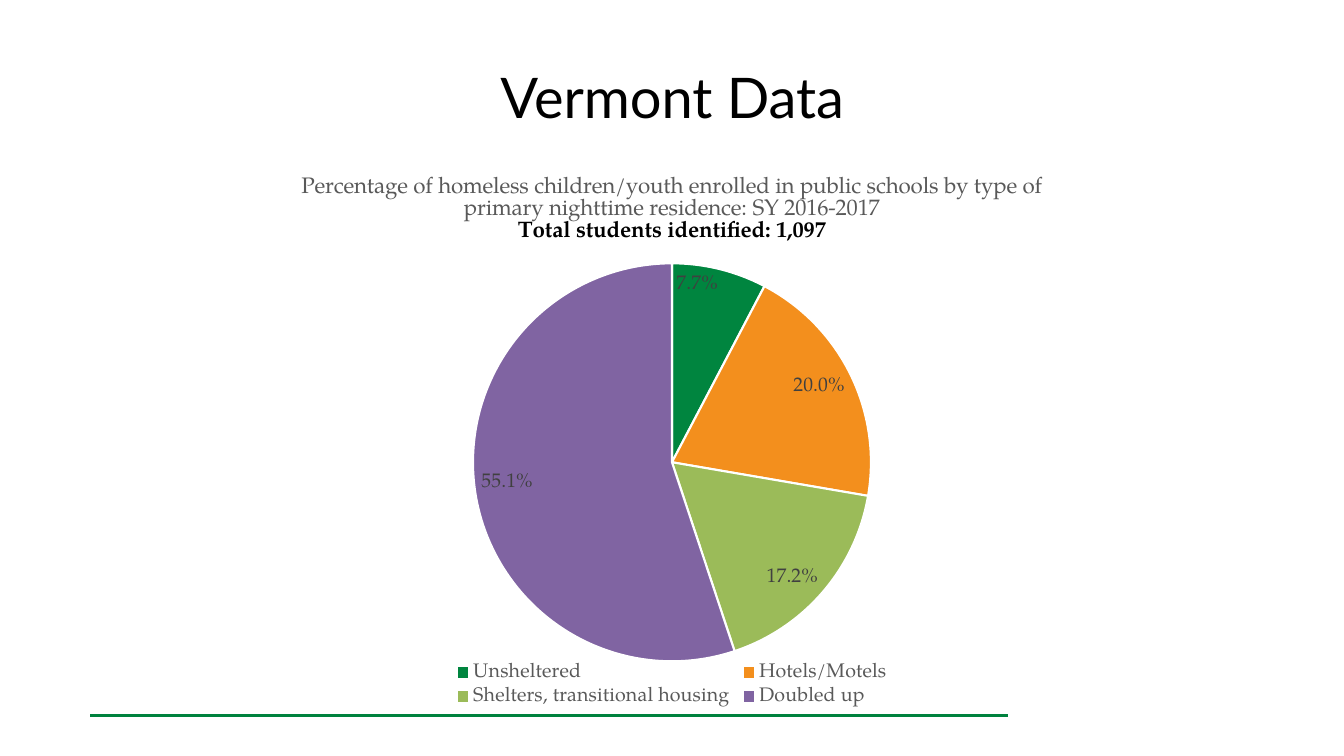
from lxml import etree
from pptx import Presentation
from pptx.chart.data import CategoryChartData
from pptx.dml.color import RGBColor
from pptx.enum.chart import XL_CHART_TYPE, XL_LABEL_POSITION, XL_LEGEND_POSITION
from pptx.enum.shapes import MSO_CONNECTOR
from pptx.enum.text import MSO_ANCHOR, PP_ALIGN
from pptx.oxml import parse_xml
from pptx.oxml.ns import nsdecls, qn
from pptx.util import Cm, Pt

PIE = XL_CHART_TYPE.PIE
INSIDE_END = XL_LABEL_POSITION.INSIDE_END
BOTTOM = XL_LEGEND_POSITION.BOTTOM
STRAIGHT = MSO_CONNECTOR.STRAIGHT
MIDDLE = MSO_ANCHOR.MIDDLE
CENTER = PP_ALIGN.CENTER

HEADING_FONT = "Lato"
CHART_FONT = "TeX Gyre Pagella"
RESIDENCES = [
    ("Unsheltered", 0.077, "00853F"),
    ("Hotels/Motels", 0.2, "F38F1D"),
    ("Shelters, transitional housing", 0.172, "9BBB59"),
    ("Doubled up", 0.551, "8064A2"),
]
CHART_TITLE = [
    ("Percentage of homeless children/youth enrolled in public schools by type of "
     "primary nighttime residence: SY 2016-2017", "595959", False),
    ("Total students identified: 1,097", "000000", True),
]


def color(hex_string):
    return RGBColor.from_string(hex_string)


def format_font(font, name, size, hex_string, bold=False):
    font.name = name
    font.size = Pt(size)
    font.bold = bold
    font.color.rgb = color(hex_string)


def write(para, text, name=CHART_FONT, size=16, hex_string="000000", bold=False):
    para.alignment = CENTER
    span = para.add_run()
    span.text = text
    format_font(span.font, name, size, hex_string, bold)


def add_heading(page, left, top, width, height):
    frame = page.shapes.add_textbox(left, top, width, height).text_frame
    frame.word_wrap = True
    frame.vertical_anchor = MIDDLE
    write(frame.paragraphs[0], "Vermont Data", name=HEADING_FONT, size=40)


def add_footer_rule(page, left, top, width):
    rule = page.shapes.add_connector(STRAIGHT, left, top, left + width, top)
    rule.line.color.rgb = color("00823E")
    rule.line.width = Pt(2.25)
    etree.SubElement(rule._element.spPr, qn("a:effectLst"))


def place_plot(chart, **fractions):
    """Fix the inner plot area as fractions (x, y, w, h) of the chart."""
    plot_area = chart._chartSpace.chart.plotArea
    for layout in plot_area.findall(qn("c:layout")):
        plot_area.remove(layout)
    sizes = "".join(f'<c:{key} val="{value}"/>' for key, value in fractions.items())
    plot_area.insert(0, parse_xml(
        f'<c:layout {nsdecls("c")}><c:manualLayout><c:layoutTarget val="inner"/>'
        f'<c:xMode val="edge"/><c:yMode val="edge"/>{sizes}'
        '</c:manualLayout></c:layout>'))


def add_residence_chart(page, left, top, width, height):
    data = CategoryChartData(number_format="0.0%")
    data.categories = [name for name, _, _ in RESIDENCES]
    data.add_series("Series 1", [share for _, share, _ in RESIDENCES])
    chart = page.shapes.add_chart(PIE, left, top, width, height, data).chart
    format_font(chart.font, CHART_FONT, 10, "000000")
    place_plot(chart, x=0.288, y=0.193, w=0.424, h=0.718)

    frame = chart.chart_title.text_frame
    for index, (text, hex_string, bold) in enumerate(CHART_TITLE):
        para = frame.add_paragraph() if index else frame.paragraphs[0]
        write(para, text, hex_string=hex_string, bold=bold)

    chart.has_legend = True
    chart.legend.position = BOTTOM
    chart.legend.include_in_layout = False
    format_font(chart.legend.font, CHART_FONT, 14, "595959")

    plot = chart.plots[0]
    plot.vary_by_categories = True
    for index, (_, _, hex_string) in enumerate(RESIDENCES):
        wedge = plot.series[0].points[index].format
        wedge.fill.solid()
        wedge.fill.fore_color.rgb = color(hex_string)
        wedge.line.color.rgb = color("FFFFFF")
        wedge.line.width = Pt(1.5)

    plot.has_data_labels = True
    labels = plot.data_labels
    labels.show_value = True
    labels.show_percentage = False
    labels.number_format = "0.0%"
    labels.number_format_is_linked = False
    labels.position = INSIDE_END
    format_font(labels.font, CHART_FONT, 14, "404040")


def main():
    deck = Presentation()
    deck.slide_width, deck.slide_height = Cm(33.87), Cm(19.05)
    page = deck.slides.add_slide(deck.slide_layouts[6])
    add_footer_rule(page, Cm(2.27), Cm(18.03), Cm(23.13))
    add_heading(page, Cm(1.7), Cm(0.84), Cm(30.48), Cm(3.18))
    add_residence_chart(page, Cm(5.1), Cm(3.94), Cm(23.67), Cm(13.97))
    deck.save("out.pptx")


if __name__ == "__main__":
    main()
